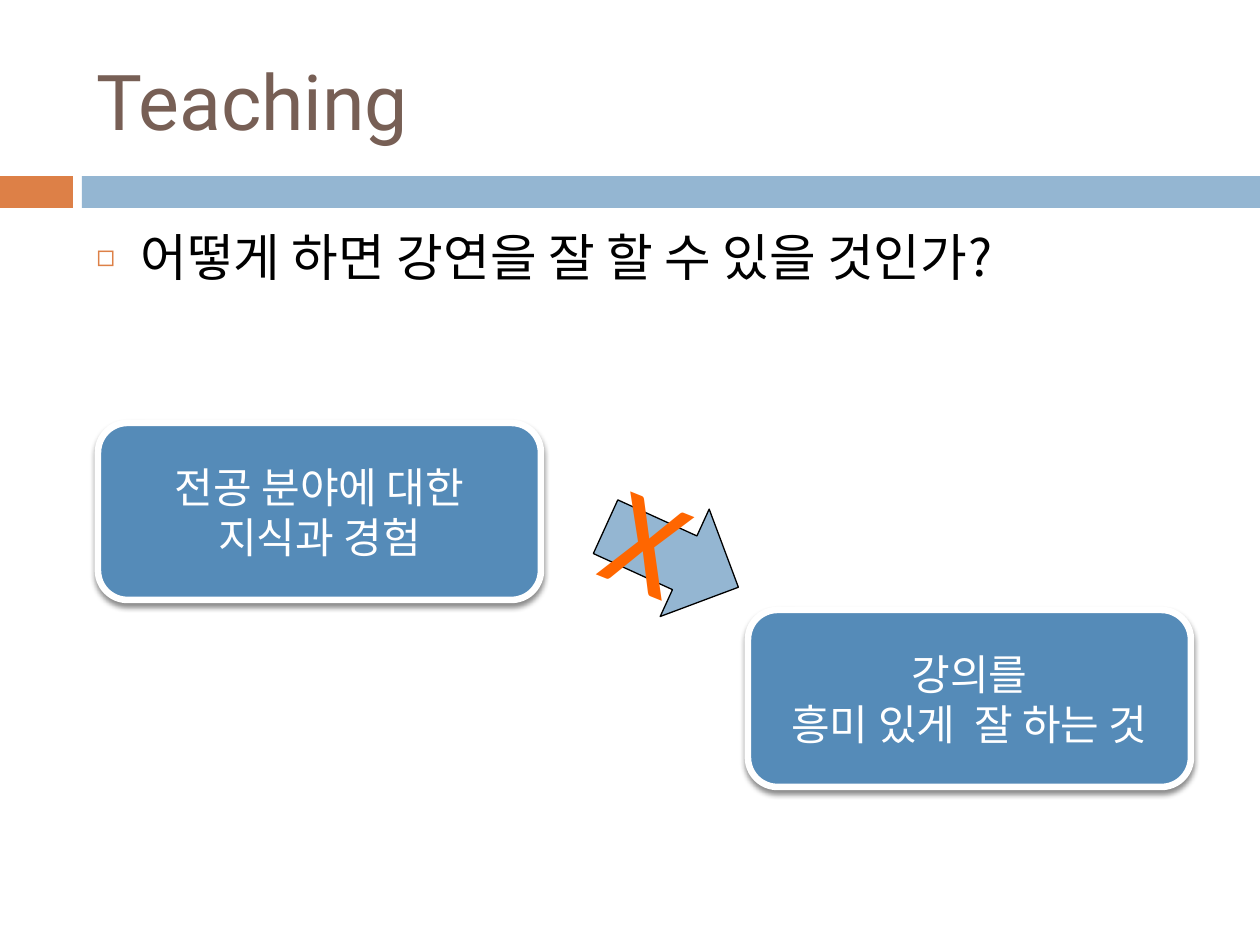
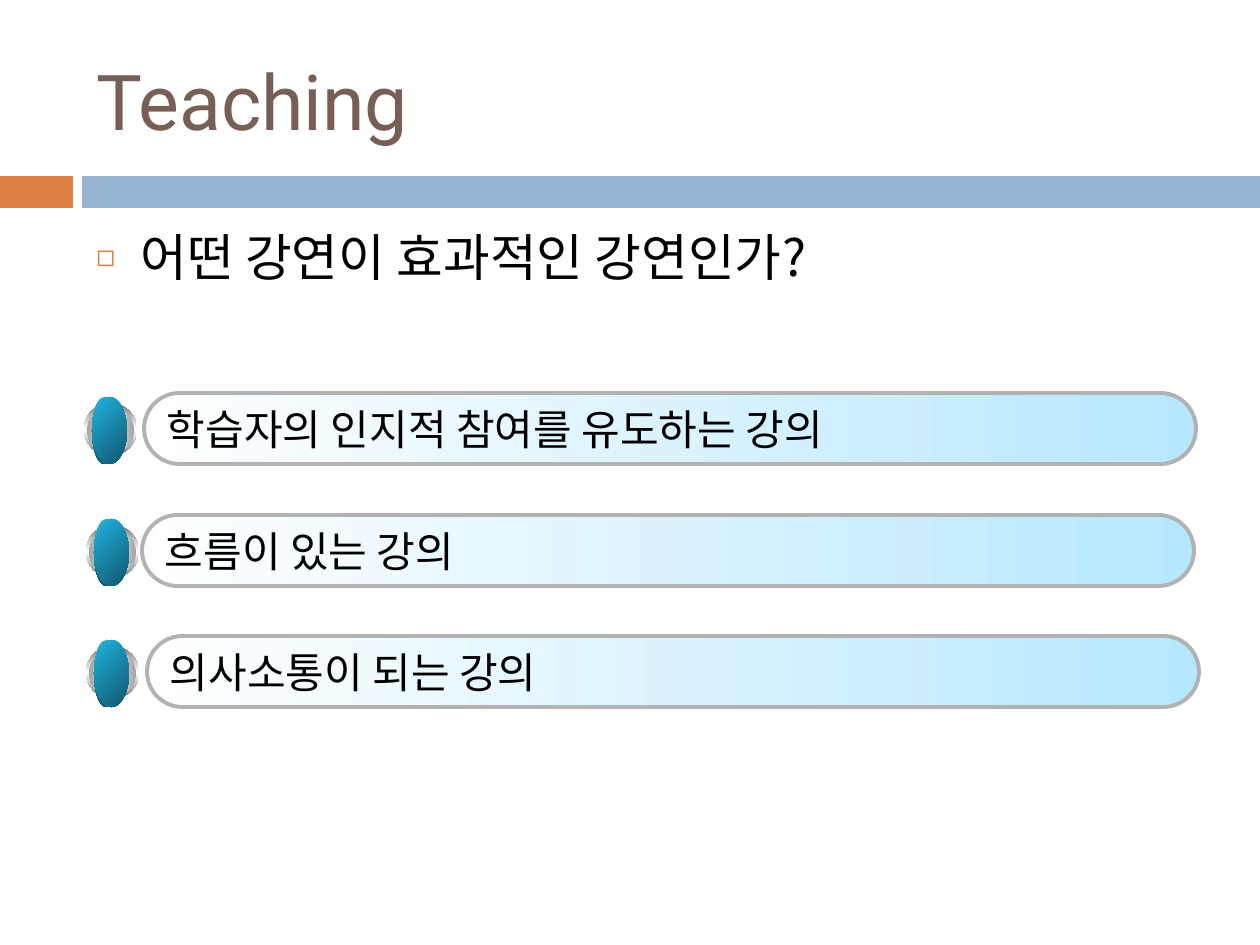
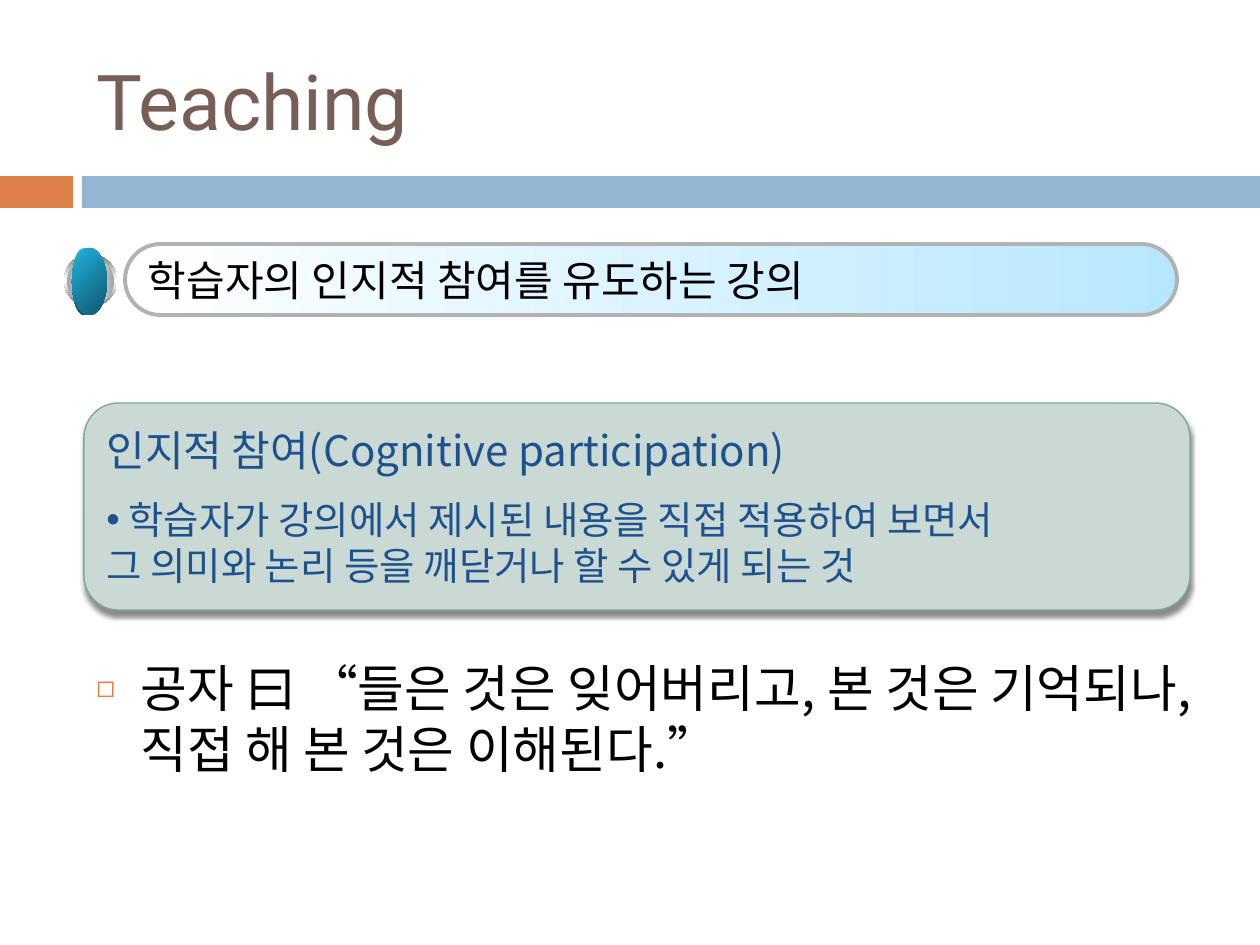
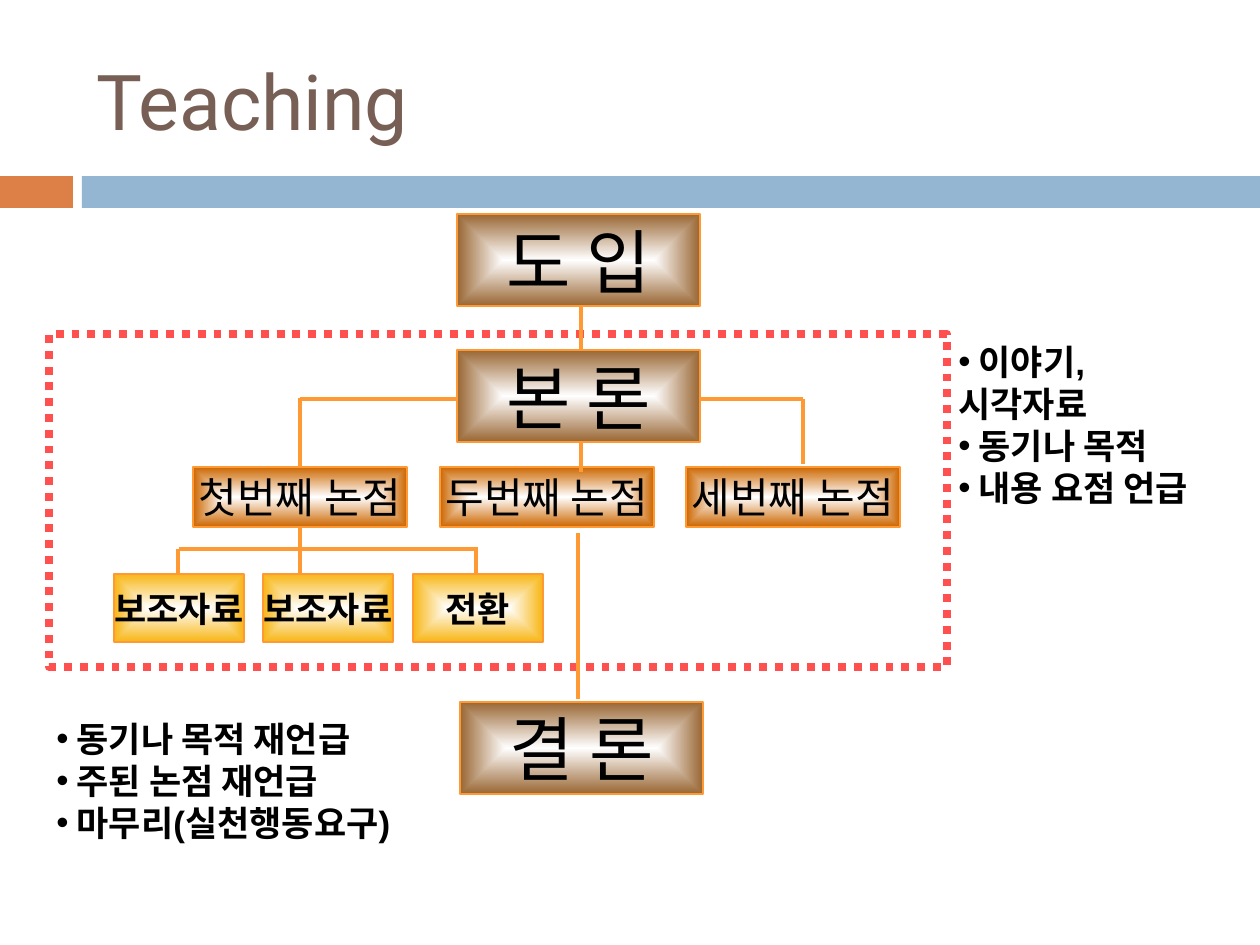
"""Builds four slides on giving an effective lecture."""
from lxml import etree
from pptx import Presentation
from pptx.dml.color import RGBColor
from pptx.enum.dml import MSO_LINE
from pptx.enum.shapes import MSO_CONNECTOR, MSO_SHAPE
from pptx.enum.text import MSO_ANCHOR, PP_ALIGN
from pptx.oxml import parse_xml
from pptx.oxml.ns import qn
from pptx.util import Pt

RECT, ROUNDED, OVAL = MSO_SHAPE.RECTANGLE, MSO_SHAPE.ROUNDED_RECTANGLE, MSO_SHAPE.OVAL
ARROW, STRAIGHT, DOTS = MSO_SHAPE.RIGHT_ARROW, MSO_CONNECTOR.STRAIGHT, MSO_LINE.ROUND_DOT
LEFT, CENTER = PP_ALIGN.LEFT, PP_ALIGN.CENTER
TOP, MIDDLE = MSO_ANCHOR.TOP, MSO_ANCHOR.MIDDLE
DRAWING = "http://schemas.openxmlformats.org/drawingml/2006/main"
SCALE = 914400 / 126
KOREAN, HEADING, SERIF, SANS, CROSS = (
    "Noto Sans CJK KR", "Roboto", "Times New Roman", "Arial", "Calibri")

COLORS = {
    "black": "000000", "white": "FFFFFF", "title": "775F55", "accent": "DD8047",
    "band": "94B6D2", "box": "558BB8", "cross": "FF6600", "sky": "B7E7FF",
    "pill_line": "B2B2B2", "panel": "CBD9D5", "panel_line": "7BA79D", "panel_text": "1D528D",
    "steel": "767676", "silver": "A2A2A2", "gold": "F7B615", "dark_gold": "BD8B10",
    "cyan": "21B3E1", "deep": "0F5368", "teal": "10576D",
    "branch": "FF9933", "part": "996633", "point": "CC6600", "frame": "FF5050",
}

TITLE = "Teaching"
BODY_AREA = (84, 220, 1124, 620)
QUESTIONS = ["어떻게 하면 강연을 잘 할 수 있을 것인가?", "어떤 강연이 효과적인 강연인가?"]
QUOTE = "공자 曰 “들은 것은 잊어버리고, 본 것은 기억되나, 직접 해 본 것은 이해된다.”"
CLAIMS = [
    ((98, 423, 443, 177), ["전공 분야에 대한 지식과 경험"]),
    ((748, 610, 443, 177), ["강의를", "흥미 있게  잘 하는 것"]),
]
QUALITIES = [
    ("학습자의 인지적 참여를 유도하는 강의", (144, 393), 84),
    ("흐름이 있는 강의", (142, 515), 86),
    ("의사소통이 되는 강의", (147, 636), 86),
]
ORB_LAYERS = [
    ((0, 0, 53, 53), ("steel", "white", "steel"), 90),
    ((3, 4, 47, 47), ("silver", "white", "silver"), 0),
    ((8, -6, 25, 67), ("white", "gold", "white"), 45),
    ((8, -6, 25, 67), ("cyan", "deep"), 90),
    ((8, -6, 35, 67), ("dark_gold", "gold", "dark_gold"), 315),
    ((8, -6, 35, 67), ("cyan", "teal"), 45),
]
PANEL_HEAD = "인지적 참여(Cognitive participation)"
PANEL_LINES = [" 학습자가 강의에서 제시된 내용을 직접 적용하여 보면서",
               "그 의미와 논리 등을 깨닫거나 할 수 있게 되는 것"]

LEVELS = {
    "part": {"size": (243, 92), "points": 40, "bold": False, "fill": "part"},
    "point": {"size": (214, 60), "points": 24, "bold": False, "fill": "point"},
    "support": {"size": (130, 68), "points": 20, "bold": True, "fill": "gold"},
}
OUTLINE = [
    {"lines": [(300, 398, 300, 625), (300, 399, 803, 399), (803, 399, 803, 464)],
     "level": "point",
     "boxes": [("첫번째 논점", 193, 467), ("두번째 논점", 440, 467), ("세번째 논점", 686, 467)]},
    {"lines": [(476, 548, 476, 582), (178, 549, 178, 588), (179, 549, 478, 549)],
     "level": "support",
     "boxes": [("보조자료", 263, 574), ("전환", 413, 574), ("보조자료", 114, 574)]},
]
SPINE = {"lines": [(581, 306, 581, 472), (578, 533, 578, 699)], "level": "part",
         "boxes": [("도 입", 457, 214), ("본 론", 457, 350), ("결 론", 460, 702)]}
NOTES = [
    ((946, 334, 309, 139), [" 이야기,\v시각자료", " 동기나 목적", " 내용 요점 언급"]),
    ((44, 711, 384, 139), [" 동기나 목적 재언급", " 주된 논점 재언급", " 마무리(실천행동요구)"]),
]


def emu(*lengths):
    return [round(length * SCALE) for length in lengths]


def rgb(name):
    return RGBColor.from_string(COLORS[name])


def paint_gradient(shape, names, angle=None):
    """Fill with evenly spaced stops, along an angle or from the centre outwards."""
    stops = "".join(
        f'<a:gs pos="{100000 * i // (len(names) - 1)}"><a:srgbClr val="{COLORS[name]}"/></a:gs>'
        for i, name in enumerate(names))
    course = (f'<a:lin ang="{angle * 60000}" scaled="0"/>' if angle is not None else
              '<a:path path="shape"><a:fillToRect l="50000" t="50000" r="50000" b="50000"/></a:path>')
    shape.fill.solid()
    solid = shape._element.spPr.find(qn("a:solidFill"))
    solid.getparent().replace(solid, parse_xml(
        f'<a:gradFill xmlns:a="{DRAWING}" rotWithShape="1"><a:gsLst>{stops}</a:gsLst>{course}</a:gradFill>'))


def add_shadow(shape):
    effects = shape._element.spPr.find(qn("a:effectLst"))
    effects.append(parse_xml(
        f'<a:outerShdw xmlns:a="{DRAWING}" blurRad="38100" dist="30480" dir="5400000" rotWithShape="0">'
        f'<a:srgbClr val="{COLORS["black"]}"><a:alpha val="45000"/></a:srgbClr></a:outerShdw>'))


def add_shape(shapes, kind, area, fill=None, line=None, width=1, angle=None):
    """Add a preset shape with a plain, gradient or empty fill."""
    shape = shapes.add_shape(kind, *emu(*area))
    shape.shadow.inherit = False
    if fill is None:
        shape.fill.background()
    elif isinstance(fill, tuple):
        paint_gradient(shape, fill, angle)
    else:
        shape.fill.solid()
        shape.fill.fore_color.rgb = rgb(fill)
    if line:
        shape.line.color.rgb = rgb(line)
        shape.line.width = Pt(width)
    else:
        shape.line.fill.background()
    return shape


def add_line(shapes, ends):
    line = shapes.add_connector(STRAIGHT, *emu(*ends))
    line.line.color.rgb = rgb("branch")
    line.line.width = Pt(2.25)
    etree.SubElement(line._element.spPr, qn("a:effectLst"))


def add_bullet(para, mark, color=None, percent=100, indent=0):
    props = para._p.get_or_add_pPr()
    props.set("marL", str(emu(indent)[0]))
    props.set("indent", str(-emu(indent)[0]))
    if color:
        etree.SubElement(etree.SubElement(props, qn("a:buClr")), qn("a:srgbClr"), val=COLORS[color])
    etree.SubElement(props, qn("a:buSzPct"), val=str(percent * 1000))
    etree.SubElement(props, qn("a:buFont"), typeface=SANS)
    etree.SubElement(props, qn("a:buChar"), char=mark)


def add_span(para, text, points, color, font, bold):
    span = para.add_run()
    span.text = text
    span.font.size = Pt(points)
    span.font.name = font
    span.font.bold = bold
    span.font.color.rgb = rgb(color)
    latin = span.font._element.find(qn("a:latin"))
    latin.addnext(latin.makeelement(qn("a:ea"), {"typeface": KOREAN}))


def write(shape, lines, points, color="black", font=KOREAN, bold=False,
          align=LEFT, anchor=MIDDLE, wrap=True):
    """Write one paragraph per line and return the paragraphs."""
    frame = shape.text_frame
    frame.word_wrap = wrap
    frame.vertical_anchor = anchor
    paras = []
    for line in lines:
        para = frame.add_paragraph() if paras else frame.paragraphs[0]
        para.alignment = align
        for i, piece in enumerate(line.split("\v")):
            if i:
                para.add_line_break()
            add_span(para, piece, points, color, font, bold)
        paras.append(para)
    return paras


def add_text(page, area, lines, points, **style):
    box = page.shapes.add_textbox(*emu(*area))
    return box, write(box, lines, points, **style)


def add_page(deck):
    page = deck.slides.add_slide(deck.slide_layouts[6])
    add_shape(page.shapes, RECT, (0, 176, 73, 32), "accent")
    add_shape(page.shapes, RECT, (82, 176, 1178, 32), "band")
    add_text(page, (84, 32, 1124, 136), [TITLE], 44, color="title", font=HEADING)
    return page


def add_body(page, text, area=BODY_AREA):
    box, (para,) = add_text(page, area, [text], 29, anchor=TOP)
    para.space_before = Pt(7)
    add_bullet(para, "◻", "accent", 60, 44)


def add_pill(page, text, corner, orb_left):
    shapes = page.shapes.add_group_shape().shapes
    left, top = corner
    pill = add_shape(shapes, ROUNDED, (left, top, 1052, 71), ("white", "sky"), "pill_line", 2.25, 0)
    pill.adjustments[0] = 0.5
    write(pill, [text], 24)
    for (x, y, width, height), names, angle in ORB_LAYERS:
        add_shape(shapes, OVAL, (orb_left + x, top + 10 + y, width, height), names, angle=angle)


def add_outline(page, lines, level, boxes):
    shapes = page.shapes.add_group_shape().shapes
    style = LEVELS[level]
    add_line(shapes, lines[0])
    for ends in lines[1:]:
        add_line(shapes, ends)
    for text, left, top in boxes:
        box = add_shape(shapes, RECT, (left, top, *style["size"]), ("white", style["fill"]), "branch")
        write(box, [text], style["points"], bold=style["bold"], align=CENTER, wrap=False)


def build_claims(deck):
    page = add_page(deck)
    add_body(page, QUESTIONS[0])
    for area, lines in CLAIMS:
        box = add_shape(page.shapes, ROUNDED, area, "box", "white", 3.75)
        add_shadow(box)
        write(box, lines, 24, "white", SERIF, align=CENTER)
    arrow = add_shape(page.shapes, ARROW, (599, 498, 146, 118), "band", "black", 0.75)
    arrow.rotation = 24.5
    cross, _ = add_text(page, (601, 446, 98, 183), ["X"], 80, color="cross", font=CROSS, anchor=TOP)
    cross.rotation = 22


def build_qualities(deck):
    page = add_page(deck)
    add_body(page, QUESTIONS[1])
    for quality in QUALITIES:
        add_pill(page, *quality)


def build_participation(deck):
    page = add_page(deck)
    add_pill(page, QUALITIES[0][0], (125, 244), 64)
    panel = add_shape(page.shapes, ROUNDED, (84, 403, 1106, 207), "panel", "panel_line", 0.79)
    add_shadow(panel)
    head, first, second = write(panel, [PANEL_HEAD, *PANEL_LINES], 24, "panel_text")
    for para in (first, second):
        para.runs[0].font.size = Pt(22)
    first.space_before = Pt(12)
    add_bullet(first, "•")
    add_body(page, QUOTE, (84, 651, 1124, 189))


def build_structure(deck):
    page = add_page(deck)
    for part in OUTLINE:
        add_outline(page, **part)
    frame = add_shape(page.shapes, RECT, (49, 334, 898, 333), None, "frame", 4.5)
    frame.line.dash_style = DOTS
    for area, lines in NOTES:
        box, paras = add_text(page, area, lines, 20, font=SANS, bold=True, anchor=TOP)
        for para in paras:
            add_bullet(para, "•")
    add_outline(page, **SPINE)


def main():
    deck = Presentation()
    deck.slide_width, deck.slide_height = emu(1260, 945)
    for build in (build_claims, build_qualities, build_participation, build_structure):
        build(deck)
    deck.save("out.pptx")


if __name__ == "__main__":
    main()
